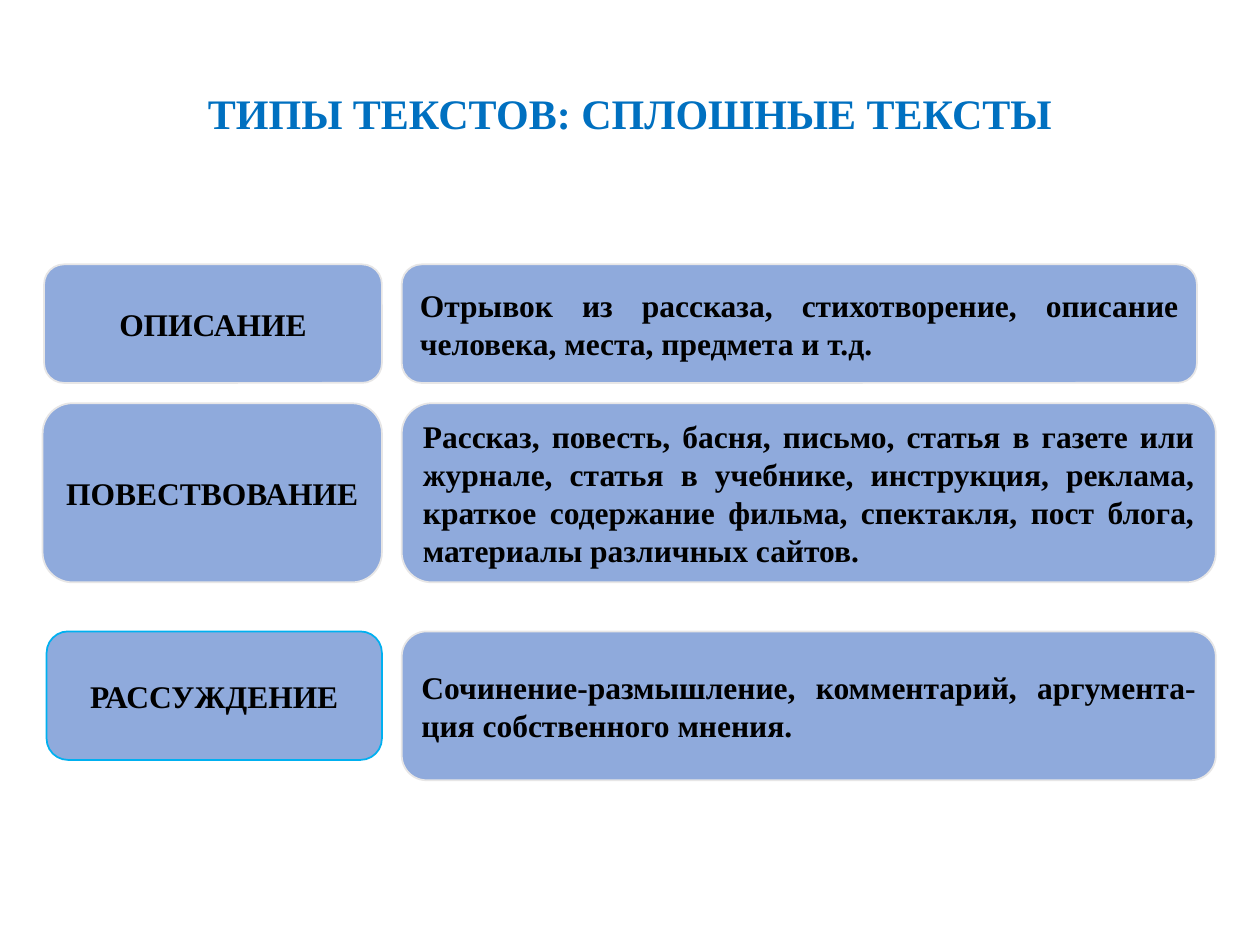
from pptx import Presentation
from pptx.dml.color import RGBColor as Rgb
from pptx.enum.shapes import MSO_SHAPE as Kind
from pptx.enum.text import MSO_ANCHOR as Anchor, PP_ALIGN as Align
from pptx.util import Cm, Pt

FONT = "Times New Roman"
BLUE = "8FAADC"
GREY = "E7E6E6"
CYAN = "00B0F0"
SPLIT = 7.7
RIGHT = 8.1

ROWS = [
    (5.33, "ОПИСАНИЕ", 0.89, 2.39, GREY,
     "Отрывок из рассказа, стихотворение, описание человека, места, "
     "предмета и т.д.", 16.03, 2.39),
    (8.13, "ПОВЕСТВОВАНИЕ", 0.86, 3.61, GREY,
     "Рассказ, повесть, басня, письмо, статья в газете или журнале, "
     "статья в учебнике, инструкция, реклама, краткое содержание фильма, "
     "спектакля, пост блога, материалы различных сайтов.", 16.41, 3.61),
    (12.73, "РАССУЖДЕНИЕ", 0.94, 2.59, CYAN,
     "Сочинение-размышление, комментарий, аргумента-ция собственного "
     "мнения.", 16.41, 3),
]


def color(code):
    return Rgb.from_string(code)


def write(frame, text, size, code, align):
    frame.word_wrap = True
    frame.vertical_anchor = Anchor.MIDDLE
    para = frame.paragraphs[0]
    para.text = text
    para.alignment = align
    font = para.font
    font.name = FONT
    font.size = Pt(size)
    font.bold = True
    font.color.rgb = color(code)
    return para


def add_title(slide, text):
    title = slide.shapes.title
    title.left, title.top = Cm(1.27), Cm(1.7)
    title.width, title.height = Cm(22.86), Cm(1.27)
    para = write(title.text_frame, text, 24, "0070C0", Align.CENTER)
    para.line_spacing = 0.9


def add_box(slide, left, top, width, height, text, align, edge=GREY):
    box = slide.shapes.add_shape(
        Kind.ROUNDED_RECTANGLE, Cm(left), Cm(top), Cm(width), Cm(height))
    box.shadow.inherit = False
    box.fill.solid()
    box.fill.fore_color.rgb = color(BLUE)
    box.line.color.rgb = color(edge)
    box.line.width = Pt(1)
    write(box.text_frame, text, 18, "000000", align)


def main():
    deck = Presentation()
    deck.slide_width, deck.slide_height = Cm(25.4), Cm(19.05)
    slide = deck.slides.add_slide(deck.slide_layouts[5])
    add_title(slide, "ТИПЫ ТЕКСТОВ: СПЛОШНЫЕ ТЕКСТЫ")
    for top, name, left, high, edge, text, width, tall in ROWS:
        add_box(slide, left, top, SPLIT - left, high, name, Align.CENTER, edge)
        add_box(slide, RIGHT, top, width, tall, text, Align.JUSTIFY)
    deck.save("out.pptx")


if __name__ == "__main__":
    main()
